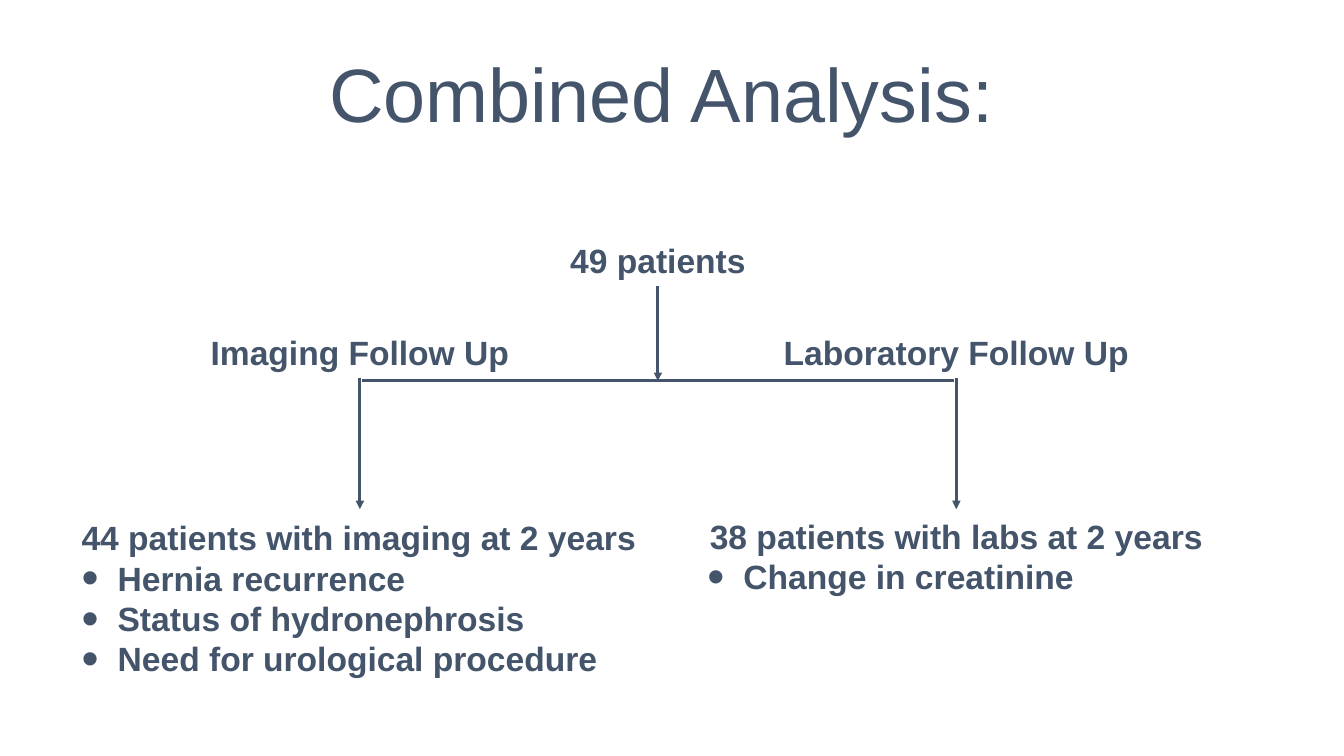
"""Build the patient follow-up flow slide."""
from lxml import etree
from pptx import Presentation
from pptx import util as u
from pptx.dml.color import RGBColor
from pptx.enum import shapes, text
from pptx.oxml import ns

SLATE = RGBColor(0x44, 0x54, 0x6A)
FONT = "Arial"
LABEL_HEIGHT = 1.32
IMAGING_X, ROOT_X, LAB_X = 9.07, 16.58, 24.1
CENTER, LEFT = text.PP_ALIGN.CENTER, text.PP_ALIGN.LEFT


class FlowSlide:
    """Hold the text and line style together with the current slide."""

    def __init__(self, slide):
        self.slide = slide

    def style(self, paragraph, size, bold, align):
        paragraph.alignment = align
        font = paragraph.font
        font.name, font.size, font.bold = FONT, u.Pt(size), bold
        font.color.rgb = SLATE

    def bullet(self, paragraph):
        props = paragraph._p.get_or_add_pPr()
        props.set("marL", str(u.Cm(0.91)))
        props.set("indent", str(-u.Cm(0.91)))
        for tag, key, value in (("a:buSzPct", "val", "145000"),
                                ("a:buFont", "typeface", FONT),
                                ("a:buChar", "char", "•")):
            etree.SubElement(props, ns.qn(tag)).set(key, value)

    def box(self, center_x, top, width, height, heading, bullets=(),
            size=24, bold=True, align=CENTER, wrap=False):
        box = self.slide.shapes.add_textbox(
            u.Cm(center_x - width / 2), u.Cm(top), u.Cm(width), u.Cm(height))
        frame = box.text_frame
        frame.word_wrap = wrap
        frame.vertical_anchor = text.MSO_ANCHOR.MIDDLE
        frame.margin_left = frame.margin_right = u.Cm(0.15)
        frame.margin_top = frame.margin_bottom = u.Cm(0.15)
        first = frame.paragraphs[0]
        first.text = heading
        self.style(first, size, bold, align)
        for item in bullets:
            paragraph = frame.add_paragraph()
            paragraph.text = item
            self.bullet(paragraph)
            self.style(paragraph, size, bold, LEFT)
        return box

    def line(self, x1, y1, x2, y2):
        line = self.slide.shapes.add_connector(
            shapes.MSO_CONNECTOR.STRAIGHT, u.Cm(x1), u.Cm(y1), u.Cm(x2), u.Cm(y2))
        line.line.color.rgb = SLATE
        line.line.width = u.Pt(2)
        etree.SubElement(line._element.spPr, ns.qn("a:effectLst"))
        return line

    def arrow_below(self, label, x, end_y):
        arrow = self.line(x, end_y - 1, x, end_y)
        arrow.begin_connect(label, 2)
        tail = etree.SubElement(arrow.line._get_or_add_ln(), ns.qn("a:tailEnd"))
        tail.set("type", "triangle")


def main():
    deck = Presentation()
    deck.slide_width, deck.slide_height = u.Cm(33.87), u.Cm(19.05)
    flow = FlowSlide(deck.slides.add_slide(deck.slide_layouts[6]))

    title = flow.box(16.93, 0.64, 33.86, 3.68, "Combined Analysis: ",
                     size=54, bold=False, wrap=True)
    title.text_frame.paragraphs[0].line_spacing = 0.9

    patients = flow.box(ROOT_X, 5.89, 4.75, LABEL_HEIGHT, "49 patients")
    flow.arrow_below(patients, ROOT_X, 9.6)
    flow.line(IMAGING_X + 0.05, 9.58, LAB_X - 0.05, 9.58)

    branches = (
        (IMAGING_X, "Imaging Follow Up", 7.87, 12.9, 14.33, 4.34, LEFT,
         "44 patients with imaging at 2 years",
         ("Hernia recurrence", "Status of hydronephrosis",
          "Need for urological procedure")),
        (LAB_X, "Laboratory Follow Up", 9.4, 12.85, 12.85, 2.34, CENTER,
         "38 patients with labs at 2 years", ("Change in creatinine",)),
    )
    for x, follow_up, label_width, top, width, height, align, cohort, outcomes in branches:
        label = flow.box(x, 8.2, label_width, LABEL_HEIGHT, follow_up)
        flow.arrow_below(label, x, 12.83)
        flow.box(x, top, width, height, cohort, outcomes, align=align)

    deck.save("out.pptx")


if __name__ == "__main__":
    main()
